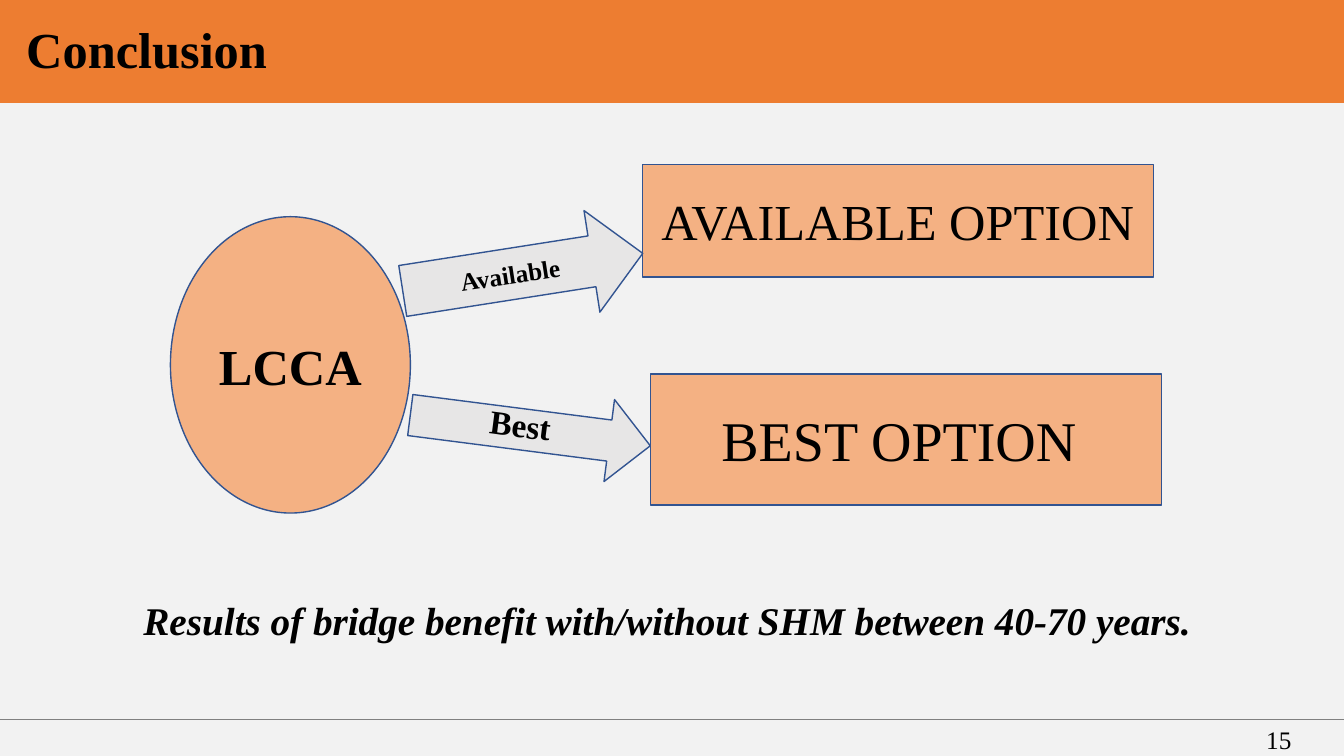
from dataclasses import dataclass

from lxml.etree import SubElement
from pptx import Presentation
from pptx.dml.color import RGBColor as Color
from pptx.enum.shapes import MSO_SHAPE as Shape
from pptx.enum.text import MSO_ANCHOR as Anchor, PP_ALIGN as Align
from pptx.oxml.ns import qn
from pptx.util import Inches, Pt


@dataclass(frozen=True)
class Theme:
    font: str = "Times New Roman"
    ink: str = "000000"
    banner: str = "ED7D31"
    panel: str = "F2F2F2"
    option: str = "F4B183"
    arrow: str = "E7E6E6"
    outline: str = "325491"
    rule: str = "808080"
    title_size: float = 36
    best_size: float = 40
    result_size: float = 28
    small_size: float = 18
    best_label_size: float = 23.8


theme = Theme()


def write(frame, text, size, bold=False, italic=False, align=Align.CENTER):
    """Fill a text frame with one formatted paragraph and return it."""
    frame.text = text
    para = frame.paragraphs[0]
    para.alignment = align
    font = para.runs[0].font
    font.name, font.size = theme.font, Pt(size)
    font.bold, font.italic = bold, italic
    font.color.rgb = Color.from_string(theme.ink)
    return para


def paint(target, color):
    target.fill.solid()
    target.fill.fore_color.rgb = Color.from_string(color)


deck = Presentation()
deck.slide_width, deck.slide_height = Inches(13.33), Inches(7.5)
page = deck.slides.add_slide(deck.slide_layouts[6])

# Background table: banner, body and footer rows
row_heights = (1.02, 6.12, 0.92)
row_fills = (theme.banner, theme.panel, theme.panel)
row_borders = (None, "a:lnB", "a:lnT")
table = page.shapes.add_table(
    3, 2, 0, 0, Inches(13.33), Inches(sum(row_heights))).table
table.first_row = table.horz_banding = False
no_grid_style = "{2D5ABB26-0587-4C30-8999-92F81FD0307C}"
table._tbl.tblPr.find(qn("a:tableStyleId")).text = no_grid_style
for column, width in zip(table.columns, (10.81, 2.52)):
    column.width = Inches(width)
for row, height, fill, border in zip(table.rows, row_heights, row_fills, row_borders):
    row.height = Inches(height)
    for cell in row.cells:
        if border:
            line = SubElement(cell._tc.get_or_add_tcPr(), qn(border), w=str(Pt(0.75)))
            solid = SubElement(line, qn("a:solidFill"))
            SubElement(solid, qn("a:srgbClr"), val=theme.rule)
        paint(cell, fill)

title = table.cell(0, 0)
title.vertical_anchor = Anchor.MIDDLE
title.margin_left = title.margin_right = Inches(0.26)
title.margin_top, title.margin_bottom = Inches(0.14), Inches(0.13)
write(title.text_frame, "Conclusion", theme.title_size, bold=True, align=Align.LEFT)

result = page.shapes.add_textbox(Inches(0.28), Inches(5.87), Inches(12.77), Inches(0.57))
result.text_frame.word_wrap = True
write(result.text_frame, "Results of bridge benefit with/without SHM between 40-70 years. ",
      theme.result_size, bold=True, italic=True)

# Diagram: kind, left, top, width, height, rotation, fill, text, size, bold
diagram = (
    (Shape.RECTANGLE, 6.37, 1.63, 5.07, 1.12, 0, theme.option,
     "AVAILABLE OPTION", theme.title_size, False),
    (Shape.OVAL, 1.69, 2.15, 2.38, 2.94, 0, theme.option,
     "LCCA", theme.title_size, True),
    (Shape.RIGHT_ARROW, 3.98, 2.19, 2.41, 1.02, 351.1, theme.arrow,
     "Available", theme.small_size, True),
    (Shape.RIGHT_ARROW, 4.06, 3.86, 2.4, 0.82, 7.3, theme.arrow,
     "Best", theme.best_label_size, True),
    (Shape.RECTANGLE, 6.45, 3.71, 5.07, 1.3, 0, theme.option,
     "BEST OPTION ", theme.best_size, False),
)
for kind, left, top, width, height, rotation, fill, text, size, bold in diagram:
    box = page.shapes.add_shape(
        kind, Inches(left), Inches(top), Inches(width), Inches(height))
    box.rotation = rotation
    box.shadow.inherit = False
    paint(box, fill)
    box.line.color.rgb = Color.from_string(theme.outline)
    box.line.width = Pt(1)
    box.text_frame.vertical_anchor = Anchor.MIDDLE
    para = write(box.text_frame, text, size, bold)
    if text == "Best":
        para.line_spacing, para.space_before = 0.7, Pt(10)

number = page.shapes.add_textbox(Inches(12.46), Inches(7.14), Inches(0.48), Inches(0.4))
number.text_frame.word_wrap = True
write(number.text_frame, "15", theme.small_size, align=Align.LEFT)

deck.save("out.pptx")
